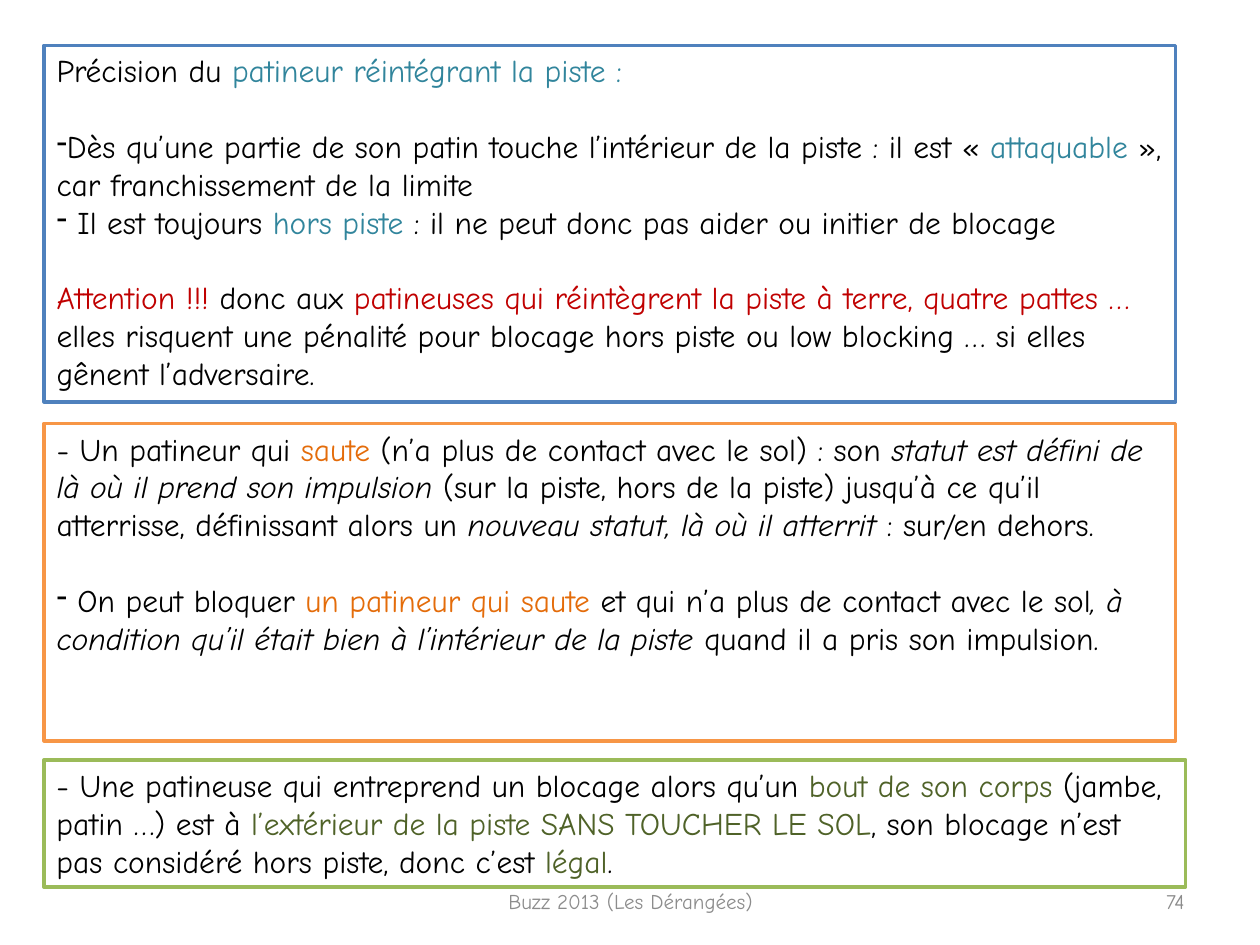
import pptx
import pptx.util
import pptx.dml.color
import pptx.enum.shapes
import pptx.enum.text
import pptx.oxml.ns
import lxml.etree

COLORS = {
    "white": "FFFFFF", "black": "000000", "grey": "8C8C8C", "red": "C00000",
    "teal": "31859C", "orange": "E46C0A", "green": "4F6228",
    "blue edge": "4F81BD", "orange edge": "F79646", "green edge": "9BBB59",
}
ALIGN = pptx.enum.text.PP_ALIGN
ANCHOR = pptx.enum.text.MSO_ANCHOR


def color(name):
    return pptx.dml.color.RGBColor.from_string(COLORS[name])


class RulesSlide:
    """Style and current slide; lengths are columns and rows of a 100 x 75 grid."""

    font_name = "Comic Neue"
    text_size = 18
    footer_size = 12
    gap = 21.6  # one line of text, in points
    cell = pptx.util.Inches(0.1)

    def __init__(self, presentation):
        self.slide = presentation.slides.add_slide(presentation.slide_layouts[6])

    def place(self, *cells):
        return [round(value * self.cell) for value in cells]

    def style(self, paragraph, size, color_name):
        paragraph.font.name = self.font_name
        paragraph.font.size = pptx.util.Pt(size)
        paragraph.font.color.rgb = color(color_name)

    def dash(self, paragraph):
        properties = paragraph._p.get_or_add_pPr()
        bullet = lxml.etree.Element(pptx.oxml.ns.qn("a:buChar"), char="-")
        properties.insert_element_before(bullet, "a:tabLst", "a:defRPr", "a:extLst")

    def box(self, area, edge, paragraphs):
        """Framed box; each paragraph is (options, runs), each run a text or a tuple."""
        shape = self.slide.shapes.add_shape(
            pptx.enum.shapes.MSO_SHAPE.RECTANGLE, *self.place(*area))
        shape.shadow.inherit = False
        shape.fill.solid()
        shape.fill.fore_color.rgb = color("white")
        shape.line.color.rgb = color(edge)
        shape.line.width = pptx.util.Pt(2)
        frame = shape.text_frame
        frame.word_wrap = True
        frame.vertical_anchor = ANCHOR.TOP
        for index, (options, runs) in enumerate(paragraphs):
            paragraph = frame.add_paragraph() if index else frame.paragraphs[0]
            paragraph.alignment = ALIGN.LEFT
            self.style(paragraph, self.text_size, "black")
            if "gap" in options:
                paragraph.space_before = pptx.util.Pt(self.gap)
            if "dash" in options:
                self.dash(paragraph)
            for item in runs:
                text, look = (item, "black") if isinstance(item, str) else item
                run = paragraph.add_run()
                run.text = text
                if look == "italic":
                    run.font.italic = True
                    look = "black"
                run.font.color.rgb = color(look)

    def footer(self, area, text, alignment):
        frame = self.slide.shapes.add_textbox(*self.place(*area)).text_frame
        frame.word_wrap = True
        frame.vertical_anchor = ANCHOR.MIDDLE
        paragraph = frame.paragraphs[0]
        paragraph.text = text
        paragraph.alignment = alignment
        self.style(paragraph, self.footer_size, "grey")


def main():
    presentation = pptx.Presentation()
    presentation.slide_width = pptx.util.Inches(10)
    presentation.slide_height = pptx.util.Inches(7.5)
    page = RulesSlide(presentation)

    # Skater coming back onto the track
    page.box((3.5, 3.6, 89.8, 28.3), "blue edge", [
        ((), ["Précision du ", ("patineur réintégrant la piste :", "teal")]),
        (("gap", "dash"), [
            "Dès qu’une partie de son patin touche l’intérieur de la piste : il est « ",
            ("attaquable", "teal"), " », car franchissement de la limite"]),
        (("dash",), [
            " Il est toujours ", ("hors piste ", "teal"),
            ": il ne peut donc pas aider ou initier de blocage"]),
        (("gap",), [
            ("Attention !!!", "red"), " donc aux ",
            ("patineuses qui réintègrent la piste à terre, quatre pattes …", "red"),
            " elles risquent une pénalité pour blocage hors piste ou low blocking"
            " … si elles gênent l’adversaire."]),
    ])

    # Jumping skater
    page.box((3.5, 33.6, 89.8, 25.2), "orange edge", [
        ((), [
            "- Un patineur qui ", ("saute", "orange"),
            " (n’a plus de contact avec le sol) : son ",
            ("statut est défini de là où il prend son impulsion", "italic"),
            " (sur la piste, hors de la piste) jusqu’à ce qu’il atterrisse,"
            " définissant alors un ",
            ("nouveau statut, là où il atterrit ", "italic"), ": sur/en dehors."]),
        (("gap", "dash"), [
            " On peut bloquer ", ("un patineur qui saute", "orange"),
            " et qui n’a plus de contact avec le sol",
            (", à condition qu’il était bien à l’intérieur de la piste ", "italic"),
            "quand il a pris son impulsion."]),
    ])

    # Block made with part of the body outside
    page.box((3.5, 60.3, 90.6, 10.1), "green edge", [
        ((), [
            "- Une patineuse qui entreprend un blocage alors qu’un ",
            ("bout de son corps ", "green"), "(jambe, patin …) est à ",
            ("l’extérieur de la piste SANS TOUCHER LE SOL", "green"),
            ", son blocage n’est pas considéré hors piste, donc c’est ",
            ("légal", "green"), "."]),
    ])

    # Footer and page number
    page.footer((34.2, 69.5, 31.7, 4), "Buzz 2013 (Les Dérangées)", ALIGN.CENTER)
    page.footer((71.7, 69.5, 23.3, 4), "74", ALIGN.RIGHT)

    presentation.save("out.pptx")


if __name__ == "__main__":
    main()
